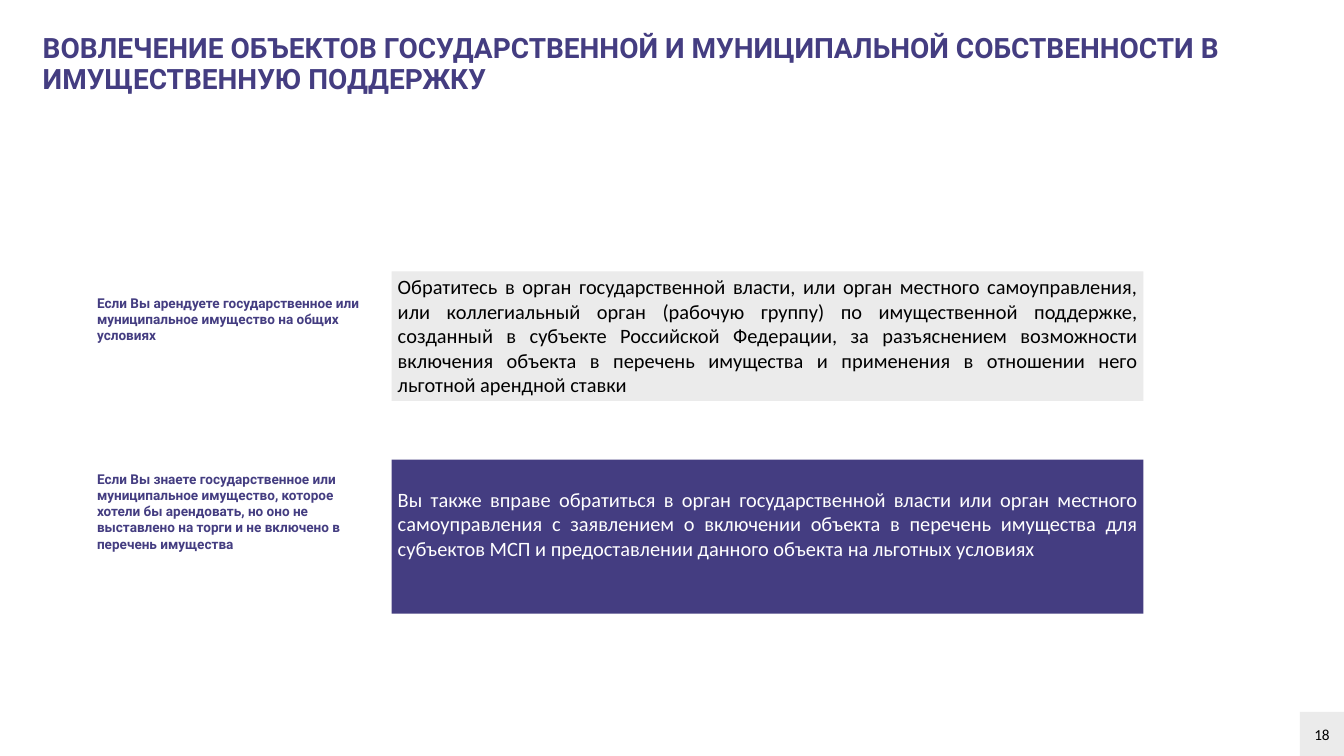
from pptx import Presentation
from pptx.dml.color import RGBColor
from pptx.enum.shapes import MSO_SHAPE
from pptx.enum.text import MSO_ANCHOR, PP_ALIGN
from pptx.util import Inches, Pt

VIOLET = RGBColor(0x44, 0x3D, 0x81)
GREY = RGBColor(0xEB, 0xEB, 0xEB)
BLACK = RGBColor(0, 0, 0)
WHITE = RGBColor(0xFF, 0xFF, 0xFF)

SLIDE_WIDTH, SLIDE_HEIGHT = 21.99, 12.37
LABEL_WIDTH = 4.5
ADVICE_OFFSET = 4.92

CASES = [
    dict(
        box=(1.49, 4.44, 17.22, 2.12),
        condition="Если Вы арендуете государственное или муниципальное имущество на общих условиях",
        advice="Обратитесь в орган государственной власти, или орган местного самоуправления, "
               "или коллегиальный орган (рабочую группу) по имущественной поддержке, созданный "
               "в субъекте Российской Федерации, за разъяснением возможности включения объекта "
               "в перечень имущества и применения в отношении него льготной арендной ставки",
        label_drop=0.33, label_height=1.45, fill=GREY, color=BLACK, inset=0.05,
    ),
    dict(
        box=(1.49, 7.52, 17.22, 2.52),
        condition="Если Вы знаете государственное или муниципальное имущество, которое хотели бы "
                  "арендовать, но оно не выставлено на торги и не включено в перечень имущества",
        advice="Вы также вправе обратиться в орган государственной власти или орган местного "
               "самоуправления с заявлением о включении объекта в перечень имущества для "
               "субъектов МСП и предоставлении данного объекта на льготных условиях",
        label_drop=0.13, label_height=2.26, fill=VIOLET, color=WHITE, inset=0.45,
    ),
]


def write(frame, lines, font, size, color, bold=False, align=PP_ALIGN.LEFT,
          spacing=1.0, anchor=MSO_ANCHOR.TOP):
    frame.word_wrap = True
    frame.vertical_anchor = anchor
    for index, line in enumerate(lines):
        paragraph = frame.paragraphs[0] if index == 0 else frame.add_paragraph()
        paragraph.text = line
        paragraph.alignment = align
        paragraph.line_spacing = spacing
        paragraph.font.name = font
        paragraph.font.size = Pt(size)
        paragraph.font.bold = bold
        paragraph.font.color.rgb = color


def add_panel(slide, box, fill):
    panel = slide.shapes.add_shape(MSO_SHAPE.RECTANGLE, *map(Inches, box))
    panel.shadow.inherit = False
    panel.fill.solid()
    panel.fill.fore_color.rgb = fill
    panel.line.fill.background()
    return panel.text_frame


def add_heading(slide, box):
    heading = slide.shapes.add_textbox(*map(Inches, box)).text_frame
    write(heading, [
        "ВОВЛЕЧЕНИЕ ОБЪЕКТОВ ГОСУДАРСТВЕННОЙ И МУНИЦИПАЛЬНОЙ СОБСТВЕННОСТИ В",
        "ИМУЩЕСТВЕННУЮ ПОДДЕРЖКУ",
    ], "Roboto", 33, VIOLET, bold=True, spacing=0.9)


def add_case(slide, box, condition, advice, label_drop, label_height, fill, color, inset):
    left, top, width, height = box
    advice_box = (left + ADVICE_OFFSET, top, width - ADVICE_OFFSET, height)
    advice_frame = add_panel(slide, advice_box, fill)
    advice_frame.margin_top = Inches(inset)
    write(advice_frame, [advice], "Calibri", 24, color, align=PP_ALIGN.JUSTIFY)

    label_box = (left, top + label_drop, LABEL_WIDTH, label_height)
    label = slide.shapes.add_textbox(*map(Inches, label_box)).text_frame
    write(label, [condition], "Roboto", 16, VIOLET, bold=True)


def add_page_number(slide, box):
    write(add_panel(slide, box, GREY), ["18"], "Calibri", 18, BLACK,
          align=PP_ALIGN.CENTER, anchor=MSO_ANCHOR.MIDDLE)


def main():
    deck = Presentation()
    deck.slide_width = Inches(SLIDE_WIDTH)
    deck.slide_height = Inches(SLIDE_HEIGHT)
    slide = deck.slides.add_slide(deck.slide_layouts[6])
    add_heading(slide, (0.6, 0.52, 20.4, 1.6))
    for case in CASES:
        add_case(slide, **case)
    add_page_number(slide, (SLIDE_WIDTH - 0.72, SLIDE_HEIGHT - 0.72, 0.72, 0.72))
    deck.save("out.pptx")


if __name__ == "__main__":
    main()
